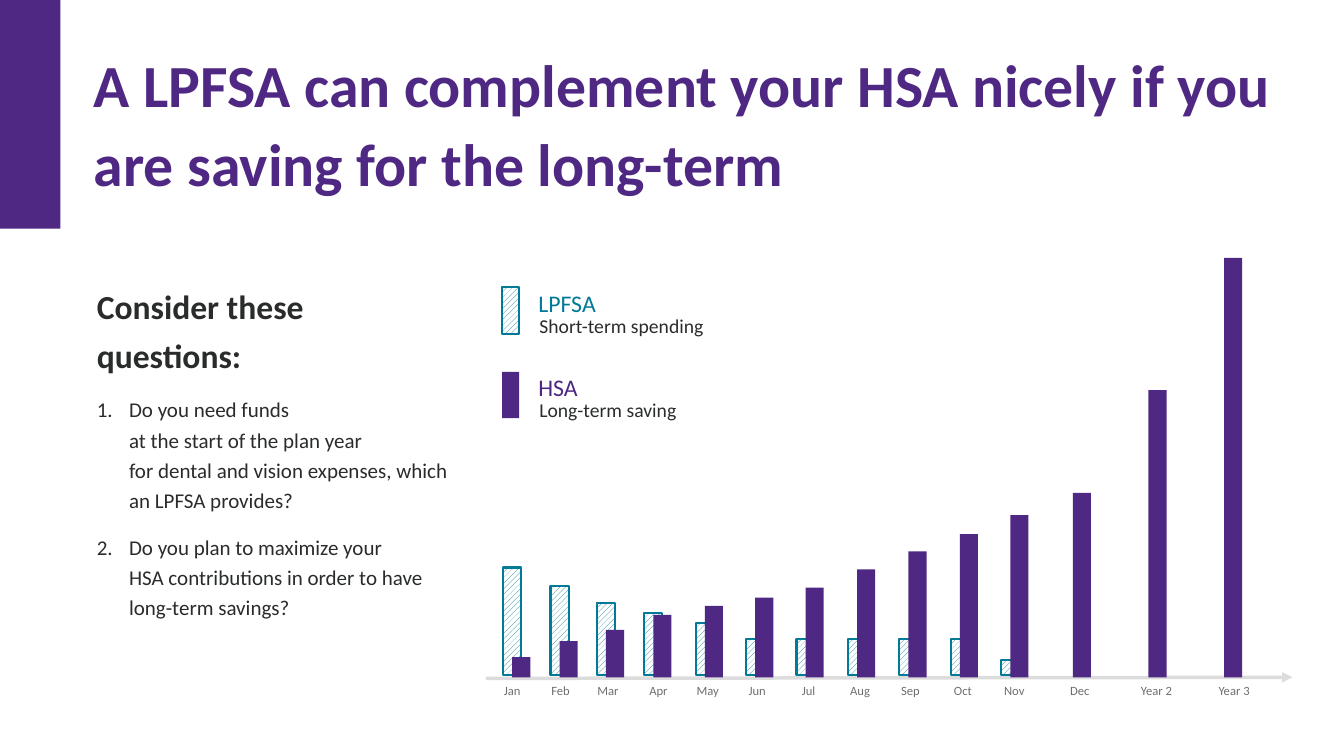
from copy import deepcopy
from pptx import Presentation
from pptx.dml.color import RGBColor
from pptx.enum.dml import MSO_PATTERN
from pptx.enum.shapes import MSO_CONNECTOR, MSO_SHAPE
from pptx.enum.text import MSO_ANCHOR, MSO_AUTO_SIZE, PP_ALIGN
from pptx.oxml.ns import qn
from pptx.util import Inches, Pt

PURPLE, TEAL, INK, GREY, AXIS = "4F2883", "007A96", "2A2C2C", "6F6F6F", "DCDCDD"
BAR_W = 0.18
PAIR_SHIFT = 0.09

# label, label centre, HSA bar left, LPFSA height, HSA height
PERIODS = [
    ("Jan", 0.26, 0.26, 1.07, 0.2),
    ("Feb", 0.74, 0.73, 0.89, 0.36),
    ("Mar", 1.21, 1.19, 0.72, 0.47),
    ("Apr", 1.71, 1.66, 0.62, 0.62),
    ("May", 2.2, 2.17, 0.52, 0.71),
    ("Jun", 2.69, 2.67, 0.36, 0.79),
    ("Jul", 3.2, 3.17, 0.36, 0.89),
    ("Aug", 3.71, 3.68, 0.36, 1.07),
    ("Sep", 4.21, 4.19, 0.36, 1.25),
    ("Oct", 4.73, 4.7, 0.36, 1.42),
    ("Nov", 5.24, 5.2, 0.15, 1.61),
    ("Dec", 5.89, 5.82, 0, 1.83),
    ("Year 2", 6.65, 6.57, 0, 2.85),
    ("Year 3", 7.42, 7.32, 0, 4.16),
]
LEGEND = [
    ("LPFSA", "Short-term spending", TEAL, True),
    ("HSA", "Long-term saving", PURPLE, False),
]
QUESTIONS = [
    "Do you need funds\nat the start of the plan year\n"
    "for dental and vision expenses, which an LPFSA provides?",
    "Do you plan to maximize your\n"
    "HSA contributions in order to have long-term savings?",
]


def rgb(value):
    """Turn a hex string into a colour."""
    return RGBColor.from_string(value)


def set_attrs(obj, values):
    """Set every attribute in a dict of format values."""
    for name, value in values.items():
        setattr(obj, name, value)


def write(p, text, size, color, bold=False, **layout):
    """Fill a paragraph and format its runs and line breaks."""
    p.text = text
    set_attrs(p, layout)
    for r in p.runs:
        set_attrs(r.font, {"name": "Calibri", "size": Pt(size), "bold": bold})
        r.font.color.rgb = rgb(color)
    for br in p._p.findall(qn("a:br")):
        br.append(deepcopy(p.runs[0]._r.rPr))


def frame(sp, inset=0.0, wrap=True):
    """Set the margins and wrapping of a shape's text."""
    tf = sp.text_frame
    margins = dict.fromkeys(
        ("margin_left", "margin_top", "margin_right", "margin_bottom"), Inches(inset))
    set_attrs(tf, {**margins, "word_wrap": wrap, "auto_size": MSO_AUTO_SIZE.NONE,
                   "vertical_anchor": MSO_ANCHOR.TOP})
    return tf


def place(sp, x, y, w, h):
    """Move a placeholder to a box."""
    set_attrs(sp, {"left": Inches(x), "top": Inches(y),
                   "width": Inches(w), "height": Inches(h)})


def add_label(s, x, y, w, h, text, size, color, inset=0.1, wrap=True, align=PP_ALIGN.LEFT):
    """Add a one-line text box."""
    sp = s.shapes.add_textbox(Inches(x), Inches(y), Inches(w), Inches(h))
    tf = frame(sp, inset, wrap)
    write(tf.paragraphs[0], text, size, color, alignment=align)


def add_bar(s, x, y, w, h, color, hatched=False):
    """Add a solid or a hatched, outlined rectangle."""
    sp = s.shapes.add_shape(MSO_SHAPE.RECTANGLE, Inches(x), Inches(y), Inches(w), Inches(h))
    sp.shadow.inherit = False
    if hatched:
        sp.fill.patterned()
        sp.fill.pattern = MSO_PATTERN.WIDE_UPWARD_DIAGONAL
        sp.fill.fore_color.rgb = rgb(color)
        sp.fill.back_color.rgb = rgb("FFFFFF")
        sp.line.color.rgb = rgb(color)
        sp.line.width = Pt(1.5)
    else:
        sp.fill.solid()
        sp.fill.fore_color.rgb = rgb(color)
        sp.line.fill.background()


def add_title(s, x, y, w, h):
    """Place the headline in the title placeholder."""
    sp = s.shapes.title
    place(sp, x, y, w, h)
    write(frame(sp).paragraphs[0],
          "A LPFSA can complement your HSA nicely if you are saving for the long-term",
          42.7, PURPLE, True, alignment=PP_ALIGN.LEFT, line_spacing=1.1)


def add_questions(s, x, y, w, h):
    """Place the heading and numbered questions in the body placeholder."""
    sp = s.placeholders[1]
    place(sp, x, y, w, h)
    tf = frame(sp)
    spacing = {"line_spacing": 1.2, "space_before": Pt(0), "space_after": Pt(12)}
    p = tf.paragraphs[0]
    pPr = p._p.get_or_add_pPr()
    pPr.set("marL", "0")
    pPr.set("indent", "0")
    pPr.append(pPr.makeelement(qn("a:buNone"), {}))
    write(p, "Consider these questions:", 24, INK, True, **spacing)
    for question in QUESTIONS:
        p = tf.add_paragraph()
        pPr = p._p.get_or_add_pPr()
        pPr.set("marL", str(Inches(0.32)))
        pPr.set("indent", str(Inches(-0.32)))
        pPr.append(pPr.makeelement(qn("a:buFont"), {"typeface": "+mj-lt"}))
        pPr.append(pPr.makeelement(qn("a:buAutoNum"), {"type": "arabicPeriod"}))
        write(p, question, 15, INK, **spacing)


def add_axis(s, x, y, w):
    """Draw the time axis with its arrowhead at the right."""
    c = s.shapes.add_connector(MSO_CONNECTOR.STRAIGHT, Inches(x + w), Inches(y),
                               Inches(x), Inches(y + 0.01))
    c.line.color.rgb = rgb(AXIS)
    c.line.width = Pt(2.5)
    ln = c.line._ln
    ln.append(ln.makeelement(qn("a:headEnd"), {"type": "triangle"}))
    spPr = c._element.spPr
    spPr.append(spPr.makeelement(qn("a:effectLst"), {}))


def add_timeline(s, x, y, w, h):
    """Draw the axis, paired bars and period labels in a box."""
    base = y + h
    add_axis(s, x, base, w)
    for label, centre, left, lpfsa, hsa in PERIODS:
        label_w = 0.27 + 0.06 * len(label)
        add_label(s, x + centre - label_w / 2, base + 0.01, label_w, 0.25,
                  label, 9, GREY, inset=0.05, wrap=False, align=PP_ALIGN.CENTER)
        if lpfsa:
            add_bar(s, x + left - PAIR_SHIFT, base - 0.02 - lpfsa, BAR_W, lpfsa, TEAL, True)
        add_bar(s, x + left, base - hsa, BAR_W, hsa, PURPLE)


def add_legend(s, x, y, w, pitch):
    """List the two accounts with their swatches."""
    for i, (name, purpose, color, hatched) in enumerate(LEGEND):
        top = y + i * pitch
        add_bar(s, x, top + 0.09, 0.17, 0.46, color, hatched)
        add_label(s, x + 0.26, top, 0.98, 0.39, name, 17, color, wrap=False)
        add_label(s, x + 0.24, top + 0.22, w - 0.24, 0.5, purpose, 14, INK, inset=0.13)


def main():
    """Build the slide and save it."""
    prs = Presentation()
    prs.slide_width, prs.slide_height = Inches(13.33), Inches(7.5)
    s = prs.slides.add_slide(prs.slide_layouts[1])
    add_bar(s, 0, 0, 0.6, 2.27, PURPLE)
    add_title(s, 0.93, 0.4, 11.85, 2.32)
    add_questions(s, 0.96, 2.76, 3.55, 3.4)
    add_timeline(s, 4.82, 2.55, 8, 4.17)
    add_legend(s, 4.98, 2.76, 3.68, 0.84)
    prs.save("out.pptx")


if __name__ == "__main__":
    main()
